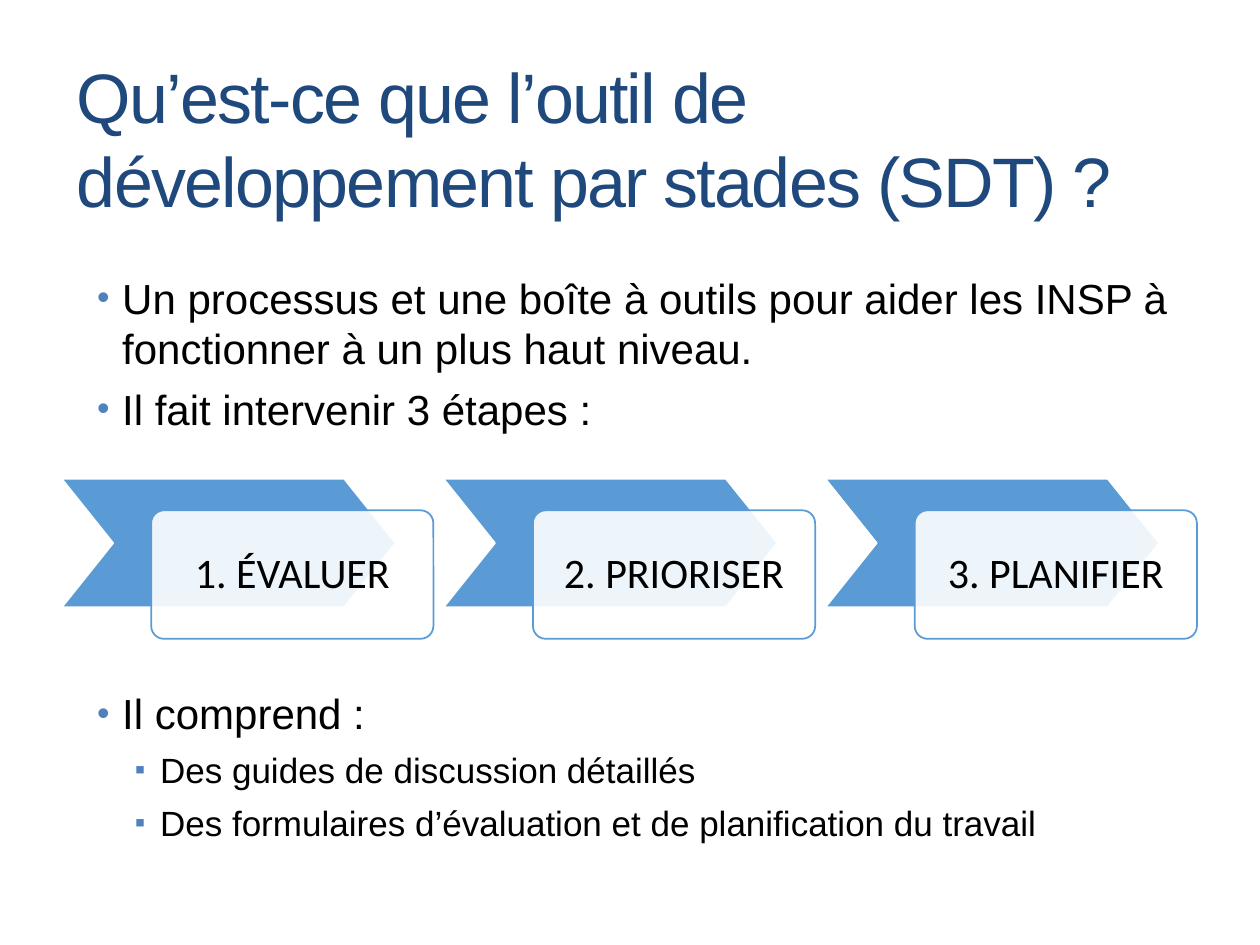
import pptx
import pptx.util
import pptx.dml.color
import pptx.enum.shapes
import pptx.enum.text
import pptx.oxml
import pptx.oxml.ns
from lxml import etree

Inches, Pt = pptx.util.Inches, pptx.util.Pt
SHAPE = pptx.enum.shapes.MSO_SHAPE
ALIGN = pptx.enum.text.PP_ALIGN
ANCHOR = pptx.enum.text.MSO_ANCHOR
qn = pptx.oxml.ns.qn

COLORS = {"title": "1F497D", "text": "000000", "bullet": "4F81BD",
          "step": "5B9BD5", "white": "FFFFFF"}

TITLE = "Qu’est-ce que l’outil de développement par stades (SDT)\u00a0?"
# text, level, space before (the large one leaves room for the steps)
BULLETS = [
    ("Un processus et une boîte à outils pour aider les INSP à fonctionner "
     "à un plus haut niveau.", 0, 0),
    ("Il fait intervenir 3 étapes\u00a0:", 0, 6),
    ("Il comprend\u00a0:", 0, 145),
    ("Des guides de discussion détaillés", 1, 6),
    ("Des formulaires d’évaluation et de planification du travail", 1, 6),
]
LEVELS = [{"char": "•", "left": 0.2, "size": 24},
          {"char": "▪", "left": 0.5, "size": 20}]
HANGING = 0.2
STEPS = ["1. ÉVALUER", "2. PRIORISER", "3. PLANIFIER"]

STEP_LEFT, STEP_TOP, STEP_PITCH, STEP_HEIGHT = 0.49, 3.8, 3.03, 1.02
CHEVRON_WIDTH, CARD_WIDTH = 2.65, 2.24
CARD_DX, CARD_DY = 0.71, 0.25


def rgb(name):
    return pptx.dml.color.RGBColor.from_string(COLORS[name])


def place(sp, left, top, width, height):
    sp.left, sp.top = Inches(left), Inches(top)
    sp.width, sp.height = Inches(width), Inches(height)


def style(font, face, size, color):
    font.name, font.size = face, Pt(size)
    font.color.rgb = rgb(color)


def add_bullet(p, char, left):
    pPr = p._p.get_or_add_pPr()
    pPr.set("marL", str(Inches(left)))
    pPr.set("indent", str(-Inches(HANGING)))
    clr = etree.SubElement(pPr, qn("a:buClr"))
    etree.SubElement(clr, qn("a:srgbClr"), val=COLORS["bullet"])
    etree.SubElement(pPr, qn("a:buSzPct"), val="85000")
    etree.SubElement(pPr, qn("a:buFont"), typeface="Arial")
    etree.SubElement(pPr, qn("a:buChar"), char=char)


def add_step_shape(shapes, kind, box, adj, fill, line):
    sp = shapes.add_shape(kind, *[Inches(v) for v in box])
    sp.shadow.inherit = False
    sp.adjustments[0] = adj
    sp.fill.solid()
    sp.fill.fore_color.rgb = rgb(fill)
    sp.line.color.rgb = rgb(line)
    sp.line.width = Pt(1)
    return sp


def add_step(shapes, text, left):
    """Chevron with a translucent, labelled card over its lower right."""
    add_step_shape(shapes, SHAPE.CHEVRON,
                   (left, STEP_TOP, CHEVRON_WIDTH, STEP_HEIGHT),
                   0.4, "step", "white")
    card = add_step_shape(shapes, SHAPE.ROUNDED_RECTANGLE,
                          (left + CARD_DX, STEP_TOP + CARD_DY,
                           CARD_WIDTH, STEP_HEIGHT),
                          0.1, "white", "step")
    clr = card._element.spPr.find(qn("a:solidFill")).find(qn("a:srgbClr"))
    etree.SubElement(clr, qn("a:alpha"), val="90000")
    tf = card.text_frame
    tf.word_wrap = True
    tf.vertical_anchor = ANCHOR.MIDDLE
    tf.margin_left = tf.margin_right = Inches(0.19)
    tf.margin_top = tf.margin_bottom = Inches(0.19)
    tf.text = text
    p = tf.paragraphs[0]
    p.alignment = ALIGN.CENTER
    p.line_spacing = 0.9
    style(p.runs[0].font, "Calibri", 24, "text")


def main():
    prs = pptx.Presentation()
    prs.slide_width, prs.slide_height = Inches(10), Inches(7.5)
    s = prs.slides.add_slide(prs.slide_layouts[1])
    title, body = s.shapes.title, s.placeholders[1]

    place(title, 0.51, 0.55, 9, 1.08)
    tf = title.text_frame
    tf.text = TITLE
    tf.auto_size = pptx.enum.text.MSO_AUTO_SIZE.NONE
    tf.vertical_anchor = ANCHOR.MIDDLE
    p = tf.paragraphs[0]
    p.alignment = ALIGN.LEFT
    style(p.runs[0].font, "Arial", 40, "title")
    p.runs[0].font._element.set("spc", "-100")

    place(body, 0.67, 2.11, 9.33, 6.3)
    tf = body.text_frame
    tf.text = "\n".join(text for text, _, _ in BULLETS)
    tf.auto_size = pptx.enum.text.MSO_AUTO_SIZE.NONE
    for p, (_, level, before) in zip(tf.paragraphs, BULLETS):
        look = LEVELS[level]
        add_bullet(p, look["char"], look["left"])
        p.level = level
        p.space_before = Pt(before)
        style(p.runs[0].font, "Arial", look["size"], "text")

    for i, text in enumerate(STEPS):
        add_step(s.shapes, text, STEP_LEFT + i * STEP_PITCH)

    prs.save("out.pptx")


if __name__ == "__main__":
    main()
